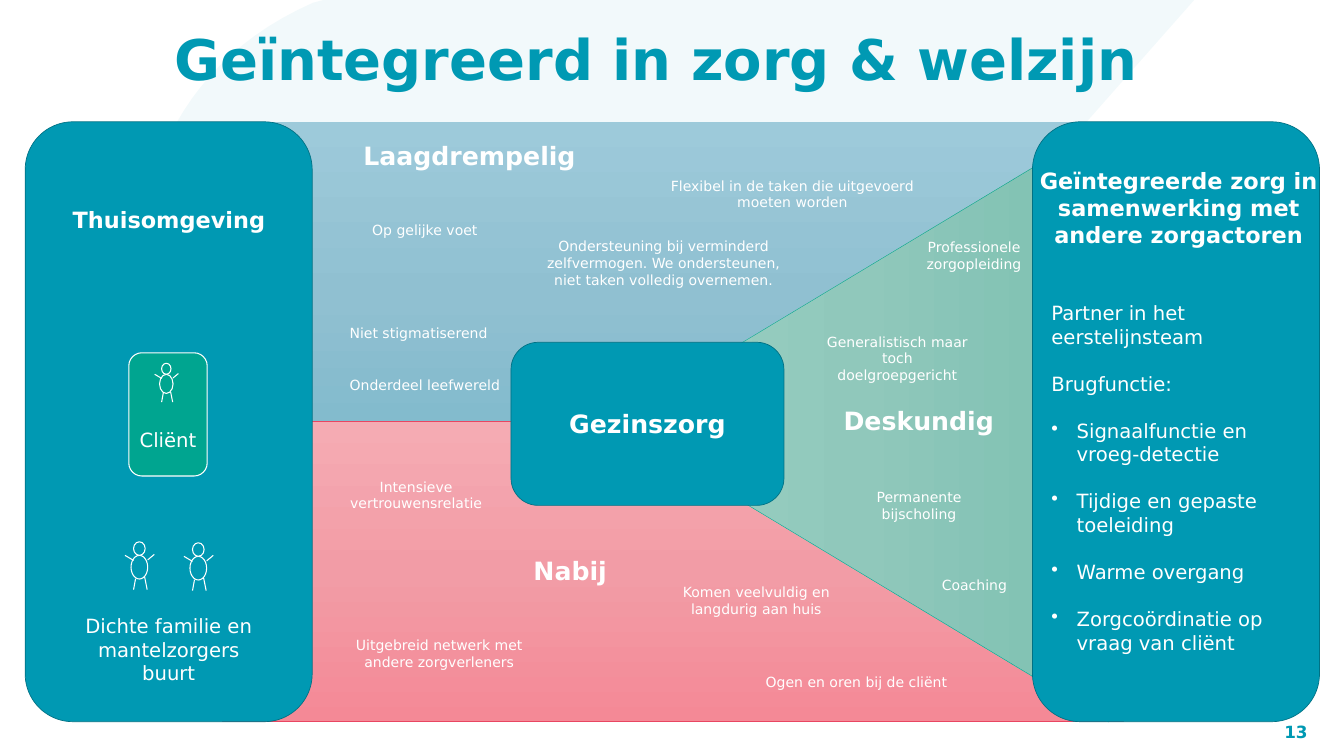
from copy import deepcopy
from dataclasses import dataclass
from typing import Optional

from lxml.etree import SubElement
from pptx import Presentation
from pptx.dml.color import RGBColor
from pptx.enum.shapes import MSO_CONNECTOR, MSO_SHAPE
from pptx.enum.text import MSO_ANCHOR, MSO_AUTO_SIZE, PP_ALIGN
from pptx.oxml.ns import qn
from pptx.util import Pt

FONT = "DejaVu Sans"
COLOURS = {"teal": "0099B3", "teal edge": "007184", "green": "00A590", "red": "E94662", "white": "FFFFFF"}
BLUES = ("9DCADA", "90C0D1", "7CB8CB")
PINKS = ("F5ABB3", "F29CA6", "F48996")
GREENS = ("9DD2C5", "90C8BB", "7CC0B1")
PANEL_TOP, PANEL_WIDTH, PANEL_HEIGHT = 174, 410, 857
LEFT_PANEL, RIGHT_PANEL = 36, 1475
BLANK_LINE = 33.5


@dataclass
class Area:
    left: float
    top: float
    width: float
    height: float

    def lengths(self) -> tuple:
        return Pt(self.left), Pt(self.top), Pt(self.width), Pt(self.height)


@dataclass
class Label:
    text: str
    area: Area


HEADINGS = [
    Label("Laagdrempelig", Area(512, 197, 420, 51)),
    Label("Deskundig", Area(1198, 575, 359, 51)),
    Label("Nabij", Area(755, 790, 420, 51)),
]
LABELS = [
    Label("Flexibel in de taken die uitgevoerd moeten worden", Area(940, 230, 384, 94)),
    Label("Op gelijke voet", Area(491, 299, 232, 60)),
    Label("Ondersteuning bij verminderd zelfvermogen. We ondersteunen, niet taken volledig overnemen.",
          Area(748, 329, 400, 94)),
    Label("Niet stigmatiserend", Area(483, 447, 230, 58)),
    Label("Onderdeel leefwereld", Area(484, 521, 246, 58)),
    Label("Professionele zorgopleiding", Area(1248, 318, 287, 94)),
    Label("Coaching", Area(1302, 780, 180, 111)),
    Label("Permanente bijscholing", Area(1191, 675, 244, 94)),
    Label("Intensieve vertrouwensrelatie", Area(451, 660, 287, 94)),
    Label("Komen veelvuldig en langdurig aan huis", Area(937, 811, 287, 94)),
    Label("Uitgebreid netwerk met andere zorgverleners", Area(484, 886, 287, 94)),
    Label("Generalistisch maar toch doelgroepgericht", Area(1160, 465, 244, 94)),
    Label("Ogen en oren bij de cliënt", Area(1080, 927, 287, 94)),
]
PARTNER_ROLES = ["Partner in het eerstelijnsteam", "Brugfunctie:"]
BRIDGE_TASKS = ["Signaalfunctie en vroeg-detectie", "Tijdige en gepaste toeleiding", "Warme overgang",
                "Zorgcoördinatie op vraag van cliënt"]
BODY_AND_HEAD = [Area(8.6, 19.4, 23.8, 33.8), Area(12.2, 0, 16.6, 19.4)]
LIMBS = [(32.4, 25.9, 41.8, 18), (0, 19.4, 12.2, 26.6), (28.1, 50.4, 31.7, 68.4), (15.1, 52.6, 12.2, 68.4)]
WASH_START = [(462, 0), (1706, 0), (1488, 247)]
WASH_CURVES = [
    ((1260, 505), (995, 901), (590, 876)),
    ((408, 868), (194, 688), (194, 424)),
    ((194, 242), (264, 85), (447, 4)),
]


def rgb(name: str) -> RGBColor:
    return RGBColor.from_string(COLOURS.get(name, name))


def write(frame, text: str, *, size: float, colour: str = "white", bold: bool = False,
          align=PP_ALIGN.CENTER, gap: float = 0, bullet: bool = False):
    first = frame.paragraphs[0]
    para = frame.add_paragraph() if first.runs else first
    if bullet:
        properties = para._p.get_or_add_pPr()
        properties.set("marL", str(Pt(36)))
        properties.set("indent", str(-Pt(36)))
        SubElement(properties, qn("a:buChar"), char="•")
    para.alignment = align
    if gap:
        para.space_before = Pt(gap)
    span = para.add_run()
    span.text = text
    span.font.name = FONT
    span.font.size = Pt(size)
    span.font.bold = bold
    span.font.color.rgb = rgb(colour)
    return para


def draw_shape(shapes, kind, area: Area, fill: Optional[str] = None,
               line: Optional[str] = None, width: float = 1):
    shape = shapes.add_shape(kind, *area.lengths())
    shape.shadow.inherit = False
    if fill:
        shape.fill.solid()
        shape.fill.fore_color.rgb = rgb(fill)
    else:
        shape.fill.background()
    if line:
        shape.line.color.rgb = rgb(line)
        shape.line.width = Pt(width)
    else:
        shape.line.fill.background()
    shape.text_frame.word_wrap = True
    shape.text_frame.vertical_anchor = MSO_ANCHOR.MIDDLE
    return shape


def shade(shape, colours: tuple) -> None:
    shape.fill.gradient()
    shape.fill.gradient_angle = 270
    stops = shape.element.spPr.find(qn("a:gradFill")).find(qn("a:gsLst"))
    stops.insert(1, deepcopy(stops[0]))
    for stop, colour, position in zip(shape.fill.gradient_stops, colours, (0, 0.5, 1)):
        stop.color.rgb = rgb(colour)
        stop.position = position


def draw_text_box(shapes, area: Area):
    box = shapes.add_textbox(*area.lengths())
    box.text_frame.word_wrap = True
    return box.text_frame


def draw_person(shapes, left: float, top: float, fill: str, scale: float = 1) -> None:
    person = shapes.add_group_shape().shapes
    for part in BODY_AND_HEAD:
        area = Area(left + part.left * scale, top + part.top * scale, part.width * scale, part.height * scale)
        draw_shape(person, MSO_SHAPE.OVAL, area, fill, "white", 1.5)
    for x1, y1, x2, y2 in LIMBS:
        limb = person.add_connector(MSO_CONNECTOR.STRAIGHT, Pt(left + x1 * scale), Pt(top + y1 * scale),
                                    Pt(left + x2 * scale), Pt(top + y2 * scale))
        limb.line.color.rgb = rgb("white")
        limb.line.width = Pt(1.5)
        SubElement(limb.element.spPr, qn("a:effectLst"))


def draw_wash(shapes):
    points = list(WASH_START)
    for second, third, end in WASH_CURVES:
        corners = (points[-1], second, third, end)
        for step in range(1, 25):
            t = step / 24
            weights = ((1 - t) ** 3, 3 * t * (1 - t) ** 2, 3 * t * t * (1 - t), t ** 3)
            points.append(tuple(sum(w * corner[axis] for w, corner in zip(weights, corners)) for axis in (0, 1)))
    outline = [(Pt(x), Pt(y)) for x, y in points]
    builder = shapes.build_freeform(*outline[0])
    builder.add_line_segments(outline[1:], close=True)
    wash = builder.convert_to_shape()
    wash.shadow.inherit = False
    wash.fill.solid()
    wash.fill.fore_color.rgb = rgb("teal")
    colour = wash.element.spPr.find(qn("a:solidFill"))[0]
    SubElement(colour, qn("a:alpha"), val="5000")
    wash.line.fill.background()
    return wash


def draw_title(page) -> None:
    title = page.shapes.title
    title.left, title.top, title.width, title.height = Area(249, 46, 1636, 107).lengths()
    frame = title.text_frame
    frame.auto_size = MSO_AUTO_SIZE.NONE
    frame.vertical_anchor = MSO_ANCHOR.TOP
    frame.margin_left = frame.margin_right = frame.margin_top = frame.margin_bottom = 0
    para = write(frame, "Geïntegreerd in zorg & welzijn", size=80, colour="teal", bold=True, align=PP_ALIGN.LEFT)
    para.line_spacing = 0.9
    title.element.addprevious(draw_wash(page.shapes).element)


def draw_fields(shapes) -> None:
    shade(draw_shape(shapes, MSO_SHAPE.RECTANGLE, Area(111, PANEL_TOP, 1531, 503)), BLUES)
    shade(draw_shape(shapes, MSO_SHAPE.RECTANGLE, Area(318, 602, 1287, 429), line="red", width=0.5), PINKS)
    wedge = draw_shape(shapes, MSO_SHAPE.ISOSCELES_TRIANGLE, Area(799, 247, 857, 712), line="green", width=0.5)
    wedge.rotation = 270
    shade(wedge, GREENS)


def draw_panel(shapes, area: Area):
    return draw_shape(shapes, MSO_SHAPE.ROUNDED_RECTANGLE, area, "teal", "teal edge").text_frame


def draw_home(shapes) -> None:
    draw_panel(shapes, Area(LEFT_PANEL, PANEL_TOP, PANEL_WIDTH, PANEL_HEIGHT))
    client = draw_shape(shapes, MSO_SHAPE.ROUNDED_RECTANGLE, Area(184, 504, 112, 176), "green", "white", 1.5)
    client.text_frame.margin_top = Pt(75)
    write(client.text_frame, "Cliënt", size=28)
    write(draw_text_box(shapes, Area(77, 291, 329, 46)), "Thuisomgeving", size=32, bold=True)
    draw_person(shapes, 221, 519, "green", 0.81)
    draw_person(shapes, 178.6, 774, "teal")
    draw_person(shapes, 262.8, 775.4, "teal")
    family = draw_text_box(shapes, Area(113, 874, 256, 153))
    for text in ("Dichte familie en mantelzorgers", "buurt"):
        write(family, text, size=28)


def draw_partners(shapes) -> None:
    frame = draw_panel(shapes, Area(RIGHT_PANEL, PANEL_TOP, PANEL_WIDTH, PANEL_HEIGHT))
    frame.vertical_anchor = MSO_ANCHOR.TOP
    frame.margin_top = Pt(236.5)
    for index, text in enumerate(PARTNER_ROLES + BRIDGE_TASKS):
        write(frame, text, size=28, align=PP_ALIGN.LEFT, gap=BLANK_LINE if index else 0,
              bullet=text in BRIDGE_TASKS)
    heading = draw_text_box(shapes, Area(RIGHT_PANEL, 197, 418, 163))
    heading.margin_top = Pt(42)
    write(heading, "Geïntegreerde zorg in samenwerking met andere zorgactoren", size=32, bold=True)


def main() -> None:
    deck = Presentation()
    deck.slide_width, deck.slide_height = Pt(1920), Pt(1080)
    page = deck.slides.add_slide(deck.slide_layouts[5])
    shapes = page.shapes
    draw_title(page)
    draw_fields(shapes)
    number = draw_text_box(shapes, Area(1800, 1016, 68, 58))
    number.vertical_anchor = MSO_ANCHOR.MIDDLE
    number.margin_left = number.margin_right = number.margin_top = number.margin_bottom = 0
    write(number, "13", size=24, colour="teal", bold=True, align=PP_ALIGN.RIGHT)
    draw_home(shapes)
    write(draw_panel(shapes, Area(730, 489, 390, 233)), "Gezinszorg", size=36, bold=True)
    for heading in HEADINGS:
        write(draw_text_box(shapes, heading.area), heading.text, size=36, bold=True, align=PP_ALIGN.LEFT)
    for label in LABELS:
        box = draw_shape(shapes, MSO_SHAPE.ROUNDED_RECTANGLE, label.area)
        write(box.text_frame, label.text, size=20)
    draw_partners(shapes)
    deck.save("out.pptx")


if __name__ == "__main__":
    main()
